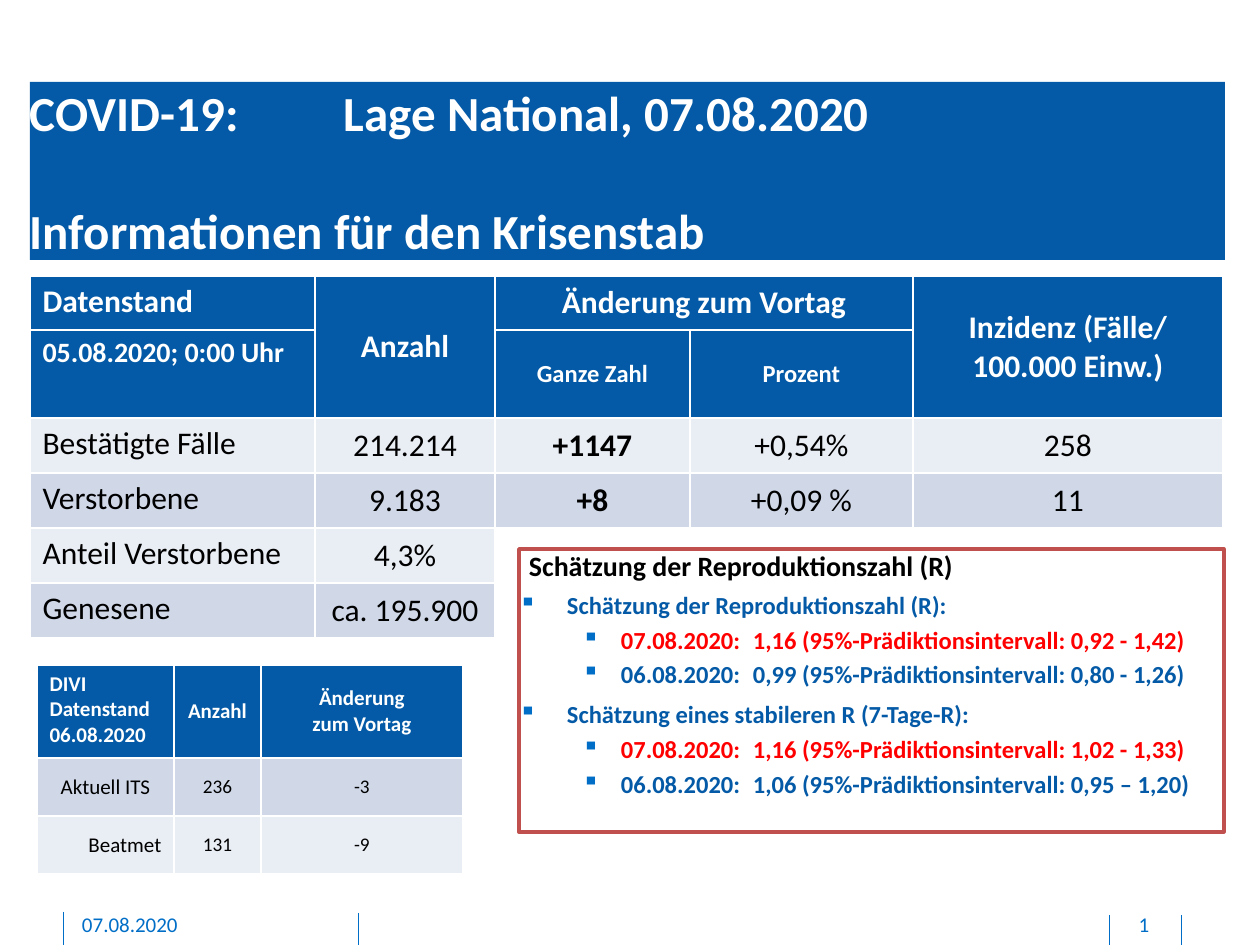
from dataclasses import dataclass

from lxml.etree import SubElement
from pptx import Presentation
from pptx.dml.color import RGBColor
from pptx.enum.shapes import MSO_CONNECTOR, MSO_SHAPE
from pptx.enum.text import MSO_ANCHOR, PP_ALIGN
from pptx.oxml.ns import qn
from pptx.util import Emu, Pt

PX = 914400 / 126
LEFT, CENTER, RIGHT = PP_ALIGN.LEFT, PP_ALIGN.CENTER, PP_ALIGN.RIGHT
TOP, MIDDLE = MSO_ANCHOR.TOP, MSO_ANCHOR.MIDDLE


@dataclass(frozen=True)
class Theme:
    font: str = "Calibri"
    blue: str = "045AA6"
    accent: str = "006EC7"
    red: str = "FF0000"
    frame: str = "C0504D"
    light: str = "E9EDF4"
    dark: str = "D0D8E8"
    white: str = "FFFFFF"
    black: str = "000000"
    title: int = 28
    large: int = 18
    medium: int = 16
    body: int = 14
    small: int = 12
    tiny: int = 11


T = Theme()


@dataclass(frozen=True)
class Cell:
    text: str
    size: int = T.large
    bold: bool = False
    align: PP_ALIGN = CENTER
    anchor: MSO_ANCHOR = MIDDLE
    color: str = T.black


@dataclass(frozen=True)
class Line:
    text: str
    color: str = T.blue
    size: int = T.body
    before: float = 3
    margin: int = 102
    indent: int = -39
    level: int = 1


@dataclass(frozen=True)
class Grid:
    left: int
    top: int
    cols: list[int]
    rows: list[int]
    fills: list[str]
    cells: list[list[Cell | None]]


def head(text: str, size: int = T.large, align: PP_ALIGN = CENTER,
         anchor: MSO_ANCHOR = MIDDLE) -> Cell:
    return Cell(text, size, True, align, anchor, T.white)


def label(text: str) -> Cell:
    return Cell(text, align=LEFT, anchor=TOP)


def px(n: int) -> Emu:
    return Emu(round(n * PX))


def rgb(value: str) -> RGBColor:
    return RGBColor.from_string(value)


def style(p, size: int, color: str, bold: bool = False, align: PP_ALIGN = LEFT) -> None:
    p.alignment = align
    for r in p.runs:
        f = r.font
        f.name, f.size, f.bold = T.font, Pt(size), bold
        f.color.rgb = rgb(color)


def add_tab(p, pos: int) -> None:
    tabs = SubElement(p._p.get_or_add_pPr(), qn("a:tabLst"))
    SubElement(tabs, qn("a:tab"), pos=str(px(pos)), algn="l")


def add_bullet(p) -> None:
    pPr = p._p.get_or_add_pPr()
    SubElement(SubElement(pPr, qn("a:buClr")), qn("a:srgbClr"), val=T.accent)
    SubElement(pPr, qn("a:buChar"), char="▪")


def add_panel(slide, box: tuple[int, ...], fill: str, line: str | None = None):
    """Add a flat rectangle without insets and return its text frame."""
    s = slide.shapes.add_shape(MSO_SHAPE.RECTANGLE, *map(px, box))
    s.shadow.inherit = False
    s.fill.solid()
    s.fill.fore_color.rgb = rgb(fill)
    if line:
        s.line.color.rgb = rgb(line)
        s.line.width = Pt(2)
    else:
        s.line.fill.background()
    tf = s.text_frame
    tf.margin_left = tf.margin_right = tf.margin_top = tf.margin_bottom = 0
    tf.word_wrap = True
    tf.vertical_anchor = TOP
    return tf


def add_grid(slide, grid: Grid) -> None:
    """Draw a table; a None cell belongs to a merge or stays empty."""
    table = slide.shapes.add_table(
        len(grid.rows), len(grid.cols), px(grid.left), px(grid.top),
        px(sum(grid.cols)), px(sum(grid.rows))).table
    for col, width in zip(table.columns, grid.cols):
        col.width = px(width)
    for row, height in zip(table.rows, grid.rows):
        row.height = px(height)
    if any(c is None for c in grid.cells[0]):
        for first, last in (((0, 1), (1, 1)), ((0, 2), (0, 3)), ((0, 4), (1, 4))):
            table.cell(*first).merge(table.cell(*last))
    for i, (fill, row) in enumerate(zip(grid.fills, grid.cells)):
        for j, item in enumerate(row):
            cell = table.cell(i, j)
            cell.fill.solid()
            empty = item is None and not cell.is_spanned
            cell.fill.fore_color.rgb = rgb(T.white if empty else fill)
            if item is None:
                continue
            cell.vertical_anchor = item.anchor
            cell.text_frame.text = item.text
            for p in cell.text_frame.paragraphs:
                style(p, item.size, item.color, item.bold, item.align)


def add_title(slide) -> None:
    tf = add_panel(slide, (30, 82, 1195, 178), T.blue)
    tf.vertical_anchor = MIDDLE
    tf.text = "COVID-19:\tLage National, 07.08.2020\nInformationen für den Krisenstab"
    first, last = tf.paragraphs
    last.space_before = Pt(34)
    add_tab(first, 314)
    for p in (first, last):
        style(p, T.title, T.white, True)


def add_estimates(slide, lines: list[Line]) -> None:
    tf = add_panel(slide, (519, 549, 705, 283), T.white, T.frame)
    tf.text = "\n".join(line.text for line in lines)
    for i, (p, line) in enumerate(zip(tf.paragraphs, lines)):
        p.level = line.level
        pPr = p._p.get_or_add_pPr()
        pPr.set("marL", str(px(line.margin)))
        pPr.set("indent", str(px(line.indent)))
        if i:
            p.space_before = Pt(line.before)
            add_bullet(p)
        if line.level:
            add_tab(p, 234)
        style(p, line.size, line.color, True)


def add_footer(slide) -> None:
    for x, y in ((358, 913), (63, 912), (1181, 915), (1109, 915)):
        s = slide.shapes.add_connector(MSO_CONNECTOR.STRAIGHT, px(x), px(y), px(x), px(945))
        s.line.color.rgb = rgb(T.accent)
        s.line.width = Pt(0.5)
        SubElement(s._element.spPr, qn("a:effectLst"))
    for x, width, text, align in ((82, 256, "07.08.2020", LEFT), (1110, 68, "1", CENTER)):
        tf = slide.shapes.add_textbox(px(x), px(912), px(width), px(26)).text_frame
        tf.margin_left = tf.margin_right = tf.margin_top = 0
        tf.word_wrap = True
        tf.text = text
        style(tf.paragraphs[0], T.small, T.accent, align=align)


CASES = Grid(30, 276, [285, 180, 195, 223, 310], [54, 54] + [55] * 4,
             [T.blue] * 2 + [T.light, T.dark] * 2, [
    [head("Datenstand", align=LEFT, anchor=TOP), head("Anzahl"),
     head("Änderung zum Vortag"), None, head("Inzidenz (Fälle/\n100.000 Einw.)")],
    [head("05.08.2020; 0:00 Uhr", T.medium, LEFT, TOP), None,
     head("Ganze Zahl", T.body), head("Prozent", T.body), None],
    [label("Bestätigte Fälle"), Cell("214.214"), Cell("+1147", bold=True),
     Cell("+0,54%"), Cell("258")],
    [label("Verstorbene"), Cell("9.183"), Cell("+8", bold=True), Cell("+0,09 %"), Cell("11")],
    [label("Anteil Verstorbene"), Cell("4,3%"), None, None, None],
    [label("Genesene"), Cell("ca. 195.900"), None, None, None],
])
INTENSIVE_CARE = Grid(37, 665, [137, 87, 202], [93, 58, 58], [T.blue, T.dark, T.light], [
    [head("DIVI\nDatenstand\n06.08.2020", T.small, LEFT, TOP), head("Anzahl", T.small),
     head("Änderung\nzum Vortag", T.small)],
    [Cell("Aktuell ITS", T.small), Cell("236", T.tiny), Cell("-3", T.tiny)],
    [Cell("Beatmet", T.small, align=RIGHT), Cell("131", T.tiny), Cell("-9", T.tiny)],
])
ESTIMATES = [
    Line("Schätzung der Reproduktionszahl (R)", T.black, T.medium, 0, 10, 0, 0),
    Line("Schätzung der Reproduktionszahl (R):", before=4.3, margin=48, indent=-48, level=0),
    Line("07.08.2020:\t1,16 (95%-Prädiktionsintervall: 0,92 - 1,42)", T.red),
    Line("06.08.2020:\t0,99 (95%-Prädiktionsintervall: 0,80 - 1,26)"),
    Line("Schätzung eines stabileren R (7-Tage-R):", before=6, margin=48, indent=-48, level=0),
    Line("07.08.2020:\t1,16 (95%-Prädiktionsintervall: 1,02 - 1,33)", T.red),
    Line("06.08.2020:\t1,06 (95%-Prädiktionsintervall: 0,95 – 1,20)"),
]


def main() -> None:
    prs = Presentation()
    prs.slide_width, prs.slide_height = px(1260), px(945)
    slide = prs.slides.add_slide(prs.slide_layouts[6])
    add_footer(slide)
    add_title(slide)
    add_grid(slide, CASES)
    add_grid(slide, INTENSIVE_CARE)
    add_estimates(slide, ESTIMATES)
    prs.save("out.pptx")


if __name__ == "__main__":
    main()
